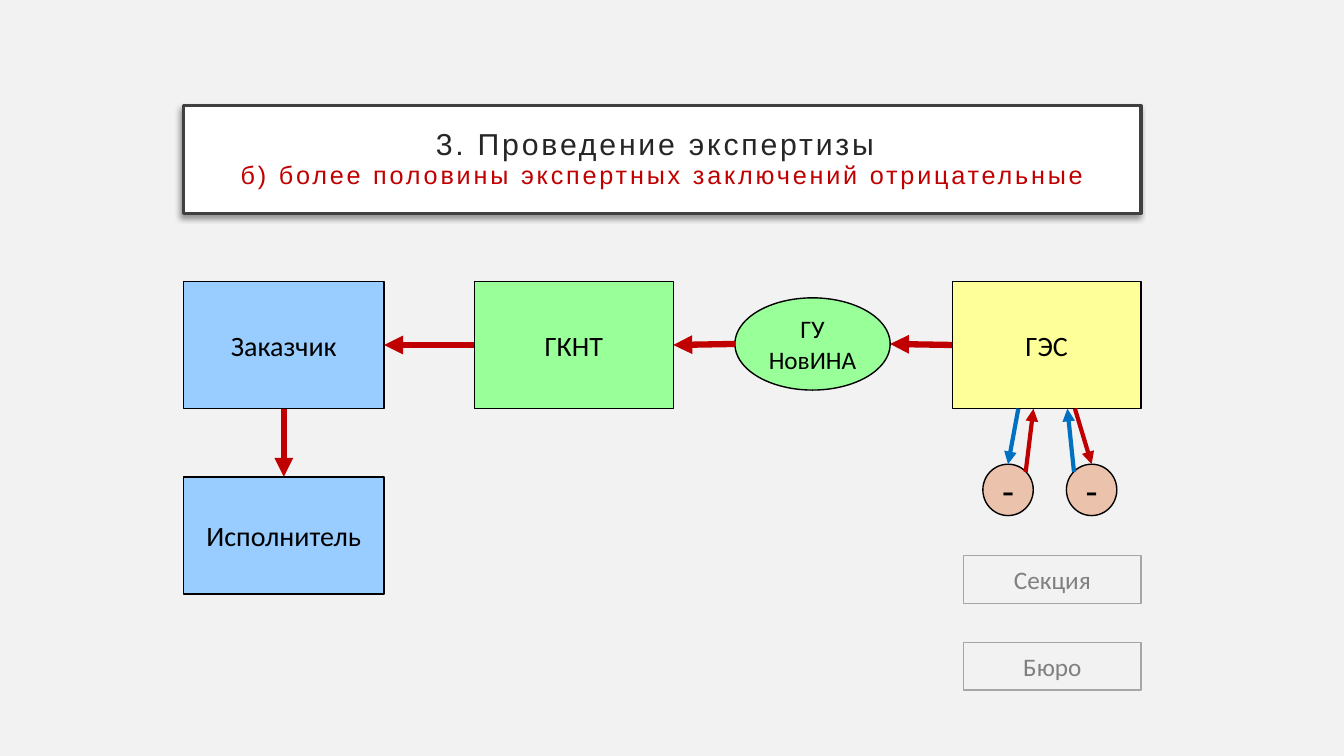
from dataclasses import dataclass

from lxml import etree
from pptx import Presentation
from pptx import util as u
from pptx.dml.color import RGBColor
from pptx.enum import shapes, text
from pptx.oxml.ns import qn


@dataclass(frozen=True)
class Theme:
    back: str = "F2F2F2"
    white: str = "FFFFFF"
    frame: str = "404040"
    head: str = "262626"
    ink: str = "000000"
    red: str = "C00000"
    blue: str = "0070C0"
    sky: str = "99CCFF"
    green: str = "99FF99"
    yellow: str = "FFFF99"
    peach: str = "EBC2AB"
    edge: str = "A6A6A6"
    gray: str = "808080"
    body: str = "Calibri"
    title: str = "Arial"
    big: float = 21.6
    large: int = 20
    small: int = 18
    sign: int = 28


T = Theme()
WIDE, HIGH = u.Inches(13.33), u.Inches(7.5)
RECT, OVAL = shapes.MSO_SHAPE.RECTANGLE, shapes.MSO_SHAPE.OVAL

# Grid in percent of the slide's width and height
LEFT, RIGHT = 13.65, 84.9
TOP, ROW = 37.2, 16.87


def across(share):
    return round(WIDE * share / 100)


def down(share):
    return round(HIGH * share / 100)


def assign(thing, form):
    for key, value in form.items():
        setattr(thing, key, value)


def color(hue):
    return RGBColor.from_string(hue)


def write(para, words, size, hue, face=T.body):
    run = para.add_run()
    run.text = words
    assign(run.font, {"size": u.Pt(size), "name": face})
    run.font.color.rgb = color(hue)
    return run


def panel(slide, kind, place, fill, line=T.ink, width=1):
    """Outlined shape with a centred, empty paragraph."""
    x, y, w, h = place
    shape = slide.shapes.add_shape(kind, across(x), down(y), across(w), down(h))
    shape.shadow.inherit = False
    if fill:
        shape.fill.solid()
        shape.fill.fore_color.rgb = color(fill)
    else:
        shape.fill.background()
    shape.line.color.rgb = color(line)
    shape.line.width = u.Pt(width)
    assign(shape.text_frame, {"word_wrap": True,
                              "vertical_anchor": text.MSO_ANCHOR.MIDDLE})
    shape.text_frame.paragraphs[0].alignment = text.PP_ALIGN.CENTER
    return shape


def node(slide, words, place, fill, size=T.large, kind=RECT, line=T.ink, hue=T.ink):
    shape = panel(slide, kind, place, fill, line)
    write(shape.text_frame.paragraphs[0], words, size, hue)
    return shape


def shade(shape):
    """Soft shadow to the lower left."""
    glow = etree.SubElement(shape._element.spPr.find(qn("a:effectLst")),
                            qn("a:outerShdw"), blurRad=str(u.Pt(4)),
                            dist=str(u.Pt(3)), dir=str(135 * 60000),
                            algn="tr", rotWithShape="0")
    tone = etree.SubElement(glow, qn("a:srgbClr"), val=T.ink)
    etree.SubElement(tone, qn("a:alpha"), val="40000")


def banner(slide, lines):
    shape = panel(slide, RECT, (LEFT, 14, RIGHT - LEFT, 14.2), T.white, T.frame, 2.25)
    shade(shape)
    sides = ("left", "right", "top", "bottom")
    assign(shape.text_frame, {f"margin_{side}": u.Inches(0.2) for side in sides})
    para = shape.text_frame.paragraphs[0]
    para.line_spacing = 0.9
    for i, (words, size, hue) in enumerate(lines):
        if i:
            para.add_line_break()
        run = write(para, words, size, hue, T.title)
        run.font._element.set("spc", "200")


def spot(shape, share):
    """Point at a share of the shape's width and height."""
    return (round(shape.left + shape.width * share[0]),
            round(shape.top + shape.height * share[1]))


def arrow(slide, start, out, end, into, hue=T.red, width=4.5):
    link = slide.shapes.add_connector(shapes.MSO_CONNECTOR.STRAIGHT,
                                      *spot(start, out), *spot(end, into))
    link.line.color.rgb = color(hue)
    link.line.width = u.Pt(width)
    etree.SubElement(link.line._get_or_add_ln(), qn("a:tailEnd"), type="triangle")
    etree.SubElement(link._element.spPr, qn("a:effectLst"))


def main():
    deck = Presentation()
    assign(deck, {"slide_width": WIDE, "slide_height": HIGH})
    slide = deck.slides.add_slide(deck.slide_layouts[6])
    slide.background.fill.solid()
    slide.background.fill.fore_color.rgb = color(T.back)

    banner(slide, [
        ("3. Проведение экспертизы ", T.big, T.head),
        ("б) более половины экспертных заключений отрицательные", T.small, T.red)])

    # Main chain of bodies
    client = node(slide, "Заказчик", (LEFT, TOP, 14.93, ROW), T.sky)
    board = node(slide, "ГКНТ", (35.3, TOP, 14.8, ROW), T.green)
    agent = node(slide, "ГУ НовИНА", (54.68, 39.4, 11.55, 12.2), T.green, T.small, OVAL)
    council = node(slide, "ГЭС", (RIGHT - 14.05, TOP, 14.05, ROW), T.yellow)
    doer = node(slide, "Исполнитель", (LEFT, 63.07, 14.93, 15.5), T.sky)

    # Negative reviews
    first, second = [node(slide, "-", (x, 61.4, 3.75, 6.8), T.peach, T.sign, OVAL)
                     for x in (73.13, 79.35)]

    # Inactive bodies
    for words, y in (("Секция", 73.5), ("Бюро", 85)):
        node(slide, words, (RIGHT - 13.2, y, 13.2, 6.3), None, T.small,
             line=T.edge, hue=T.gray)

    # Flow of the decision
    chain = [council, agent, board, client]
    for start, end in zip(chain, chain[1:]):
        arrow(slide, start, (0, 0.5), end, (1, 0.5))
    arrow(slide, client, (0.5, 1), doer, (0.5, 0))

    # Exchange with the reviewers
    for start, out, end, into, hue in (
            (council, (0.35, 1), first, (0.5, 0), T.blue),
            (council, (0.65, 1), second, (0.5, 0), T.red),
            (first, (0.85, 0.15), council, (0.43, 1), T.red),
            (second, (0.15, 0.15), council, (0.61, 1), T.blue)):
        arrow(slide, start, out, end, into, hue, 3)

    deck.save("out.pptx")


if __name__ == "__main__":
    main()
